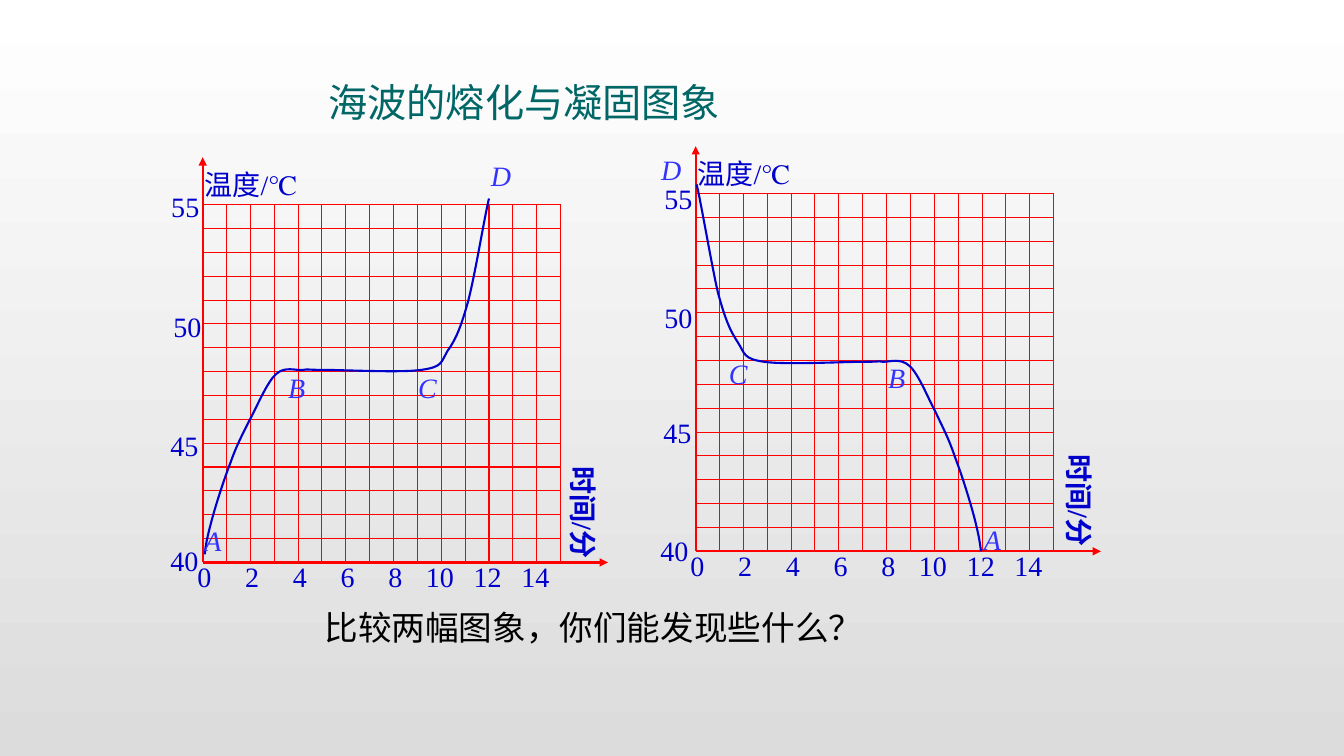
from lxml import etree
from pptx import Presentation
from pptx.dml.color import RGBColor
from pptx.enum.shapes import MSO_CONNECTOR
from pptx.enum.text import MSO_AUTO_SIZE
from pptx.oxml.ns import qn
from pptx.util import Inches, Pt

STRAIGHT = MSO_CONNECTOR.STRAIGHT
GROW = MSO_AUTO_SIZE.SHAPE_TO_FIT_TEXT

HEADS = [
    ("比较两幅图象，你们能发现些什么？", 3.12, 5.97, 5.59, 0.5, "ask"),
    ("海波的熔化与凝固图象", 3.16, 0.73, 5.24, 0.57, "title"),
]
TEMP = "温度/℃"
TIME = "时间/分"
TICKS = [0, 2, 4, 6, 8, 10, 12, 14]
GRAPHS = [
    {
        "zero": (2.01, 5.58),
        "time": (5.21, 4.88, 1.14),
        "temps": [("40", 1.59, 5.34), ("45", 1.59, 4.2), ("50", 1.62, 3.02), ("55", 1.6, 1.83)],
        "marks": [("A", 1.93, 5.14), ("B", 2.76, 3.63), ("C", 4.05, 3.63), ("D", 4.77, 1.52)],
        "curve": [
            (2.03, 5.5),
            (2.04, 5.42), (2.05, 5.35), (2.09, 5.2),
            (2.13, 5.04), (2.22, 4.76), (2.29, 4.58),
            (2.35, 4.41), (2.41, 4.3), (2.48, 4.16),
            (2.56, 4.01), (2.65, 3.79), (2.74, 3.71),
            (2.83, 3.63), (2.93, 3.68), (3.01, 3.67),
            (3.08, 3.66), (3.01, 3.67), (3.2, 3.67),
            (3.4, 3.67), (3.98, 3.7), (4.18, 3.67),
            (4.39, 3.64), (4.37, 3.6), (4.44, 3.48),
            (4.52, 3.37), (4.57, 3.25), (4.64, 3),
            (4.71, 2.74), (4.8, 2.18), (4.85, 1.97),
        ],
    },
    {
        "zero": (6.9, 5.47),
        "time": (10.12, 4.77, 1.16),
        "temps": [("40", 6.45, 5.24), ("45", 6.48, 4.07), ("50", 6.49, 2.93), ("55", 6.49, 1.75)],
        "marks": [("A", 9.66, 5.13), ("B", 8.71, 3.53), ("C", 7.13, 3.49), ("D", 6.46, 1.46)],
        "curve": [
            (9.73, 5.47),
            (9.72, 5.39), (9.71, 5.32), (9.67, 5.16),
            (9.63, 5), (9.54, 4.71), (9.47, 4.53),
            (9.41, 4.35), (9.35, 4.24), (9.28, 4.09),
            (9.2, 3.94), (9.11, 3.71), (9.02, 3.63),
            (8.93, 3.55), (8.83, 3.59), (8.76, 3.59),
            (8.68, 3.58), (8.76, 3.59), (8.56, 3.59),
            (8.36, 3.59), (7.78, 3.62), (7.58, 3.59),
            (7.37, 3.56), (7.39, 3.51), (7.32, 3.4),
            (7.24, 3.28), (7.19, 3.16), (7.12, 2.9),
            (7.06, 2.64), (6.96, 2.05), (6.91, 1.83),
        ],
    },
]

SERIF, SANS = "Times New Roman", "Noto Sans CJK SC"
THEME = {
    "sky": ("FFFFFF", "DCDCDC"),
    "grid": ("FF0000", 0.75),
    "axis": ("FF0000", 1.5),
    "curve": ("0000CC", 1.5),
    "label": {"name": SERIF, "size": Pt(20), "color": "0000CC"},
    "time": {"name": SERIF, "size": Pt(20), "color": "0000CC", "bold": True},
    "mark": {"name": SERIF, "size": Pt(20), "color": "3333FF", "italic": True},
    "ask": {"name": SANS, "size": Pt(24), "color": "000000"},
    "title": {"name": SANS, "size": Pt(28), "color": "006666"},
}
CELLS = 15
SIDE = 3.55
STEP = SIDE / CELLS
REACH = 4.02
ROW = 0.44


def rgb(code):
    return RGBColor.from_string(code)


def ink(line, kind):
    code, width = THEME[kind]
    line.color.rgb = rgb(code)
    line.width = Pt(width)


def write(shapes, text, x, y, w, h, kind):
    box = shapes.add_textbox(Inches(x), Inches(y), Inches(w), Inches(h))
    frame = box.text_frame
    frame.word_wrap = True
    frame.auto_size = GROW
    run = frame.paragraphs[0].add_run()
    run.text = text
    for key, value in THEME[kind].items():
        if key == "color":
            run.font.color.rgb = rgb(value)
        else:
            setattr(run.font, key, value)
    if run.font.name == SANS:
        etree.SubElement(run.font._element, qn("a:ea"), typeface=SANS)
    return box


def rule(shapes, x1, y1, x2, y2, kind):
    line = shapes.add_connector(STRAIGHT, *map(Inches, (x1, y1, x2, y2)))
    ink(line.line, kind)
    if kind == "axis":
        etree.SubElement(line.line._get_or_add_ln(), qn("a:tailEnd"), type="triangle")
    etree.SubElement(line._element.spPr, qn("a:effectLst"))


def bend(shapes, points):
    spots = [(Inches(x), Inches(y)) for x, y in points]
    pen = shapes.build_freeform(*spots[0])
    pen.add_line_segments(spots[1:], close=False)
    curve = pen.convert_to_shape()
    curve.shadow.inherit = False
    curve.fill.background()
    ink(curve.line, "curve")
    track = curve._element.find(".//" + qn("a:path"))
    legs = track.findall(qn("a:lnTo"))
    for i in range(0, len(legs), 3):
        arc = etree.SubElement(track, qn("a:cubicBezTo"))
        for leg in legs[i:i + 3]:
            arc.append(leg[0])
            track.remove(leg)


def plot(shapes, graph):
    x, y = graph["zero"]
    rule(shapes, x, y, x, y - REACH, "axis")
    rule(shapes, x, y, x + REACH, y, "axis")
    for i in range(1, CELLS + 1):
        gap = i * STEP
        rule(shapes, x + gap, y - SIDE, x + gap, y, "grid")
        rule(shapes, x, y - gap, x + SIDE, y - gap, "grid")
    write(shapes, TEMP, x - 0.08, y - 3.97, 1.58, ROW, "label")
    write(shapes, TIME, *graph["time"], ROW, "time").rotation = 90
    for tick in TICKS:
        shift = 0.15 if tick < 10 else 0.25
        write(shapes, str(tick), x + tick * STEP - shift, y - 0.08, 0.6, ROW, "label")
    for text, left, top in graph["temps"]:
        write(shapes, text, left, top, 0.79, ROW, "label")
    bend(shapes, graph["curve"])
    for text, left, top in graph["marks"]:
        write(shapes, text, left, top, 0.47, ROW, "mark")


def main():
    deck = Presentation()
    deck.slide_width, deck.slide_height = Inches(13.33), Inches(7.5)
    slide = deck.slides.add_slide(deck.slide_layouts[6])
    sky = slide.background.fill
    sky.gradient()
    sky.gradient_angle = 270
    for stop, code in zip(sky.gradient_stops, THEME["sky"]):
        stop.color.rgb = rgb(code)
    for graph in GRAPHS:
        plot(slide.shapes.add_group_shape().shapes, graph)
    for head in HEADS:
        write(slide.shapes, *head)
    deck.save("out.pptx")


if __name__ == "__main__":
    main()
